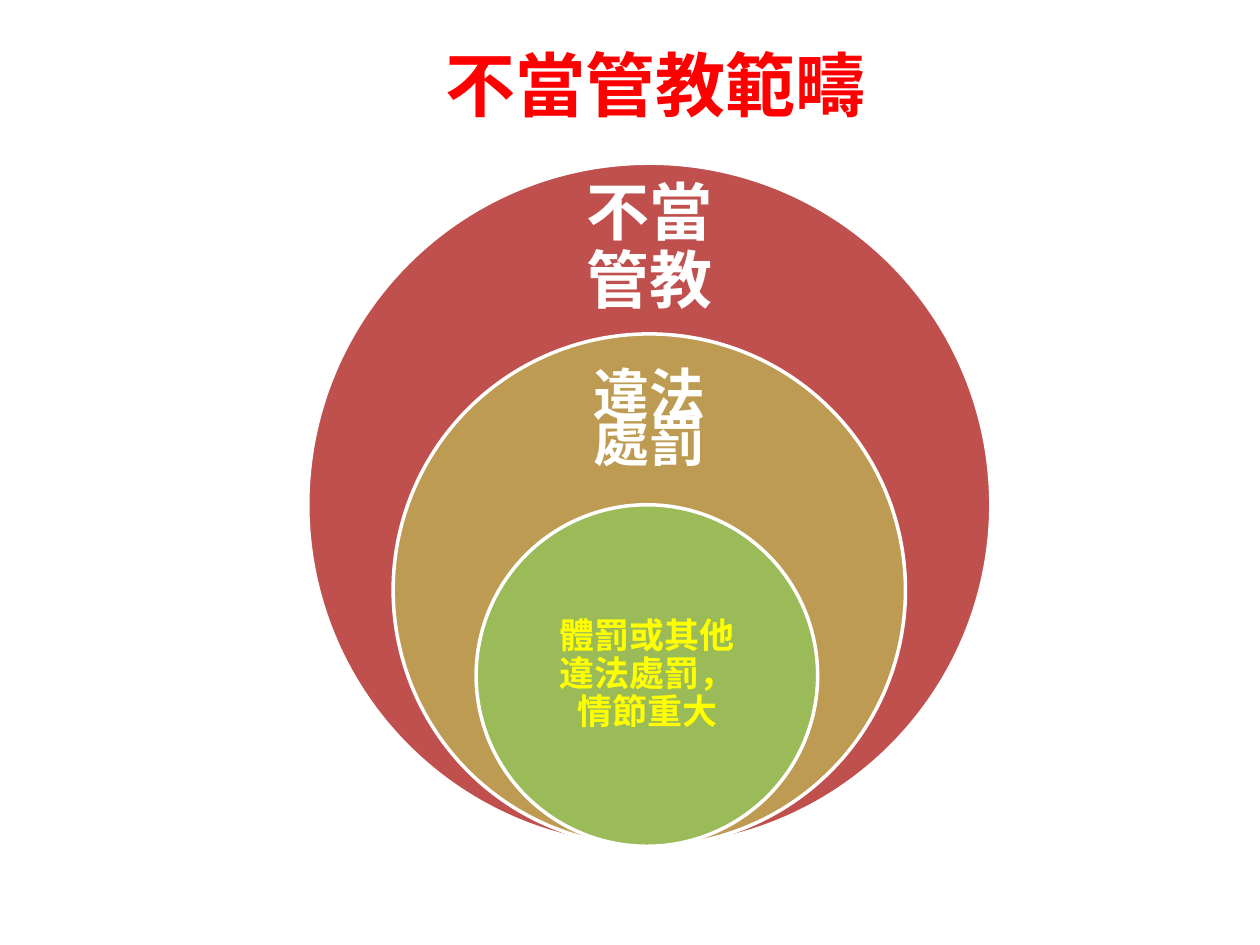
from pptx import Presentation
from pptx.dml.color import RGBColor
from pptx.enum.shapes import MSO_SHAPE
from pptx.enum.text import MSO_ANCHOR, PP_ALIGN
from pptx.util import Cm, Pt

COLOURS = {
    "outer": "C0504D",
    "middle": "BD9B53",
    "inner": "9BBB59",
    "white": "FFFFFF",
    "yellow": "FFFF00",
    "red": "FF0000",
}
OUTER_DIAMETER = 13.77
RINGS_BOTTOM = 17.06


def colour(name):
    """Return the named colour."""
    return RGBColor.from_string(COLOURS[name])


def add_ring(page, name, centre, scale):
    """Draw a circle that stands on the common bottom line."""
    size = OUTER_DIAMETER * scale
    ring = page.shapes.add_shape(
        MSO_SHAPE.OVAL, Cm(centre - size / 2), Cm(RINGS_BOTTOM - size), Cm(size), Cm(size)
    )
    ring.shadow.inherit = False
    ring.fill.solid()
    ring.fill.fore_color.rgb = colour(name)
    ring.line.color.rgb = colour("white")
    ring.line.width = Pt(2)


def add_label(page, lines, area, size, ink, inset=0, spacing=0.9, after=0):
    """Add bold text centred in an area of centre, top, width and height."""
    centre, top, width, height = area
    box = page.shapes.add_textbox(Cm(centre - width / 2), Cm(top), Cm(width), Cm(height))
    frame = box.text_frame
    frame.word_wrap = True
    frame.vertical_anchor = MSO_ANCHOR.MIDDLE
    frame.margin_left = frame.margin_right = Cm(inset)
    frame.margin_top = frame.margin_bottom = Cm(inset)
    frame.text = "\n".join(lines)
    for para in frame.paragraphs:
        para.alignment = PP_ALIGN.CENTER
        para.line_spacing = spacing
        para.space_after = Pt(after)
        para.font.name = "Arial"
        para.font.size = Pt(size)
        para.font.bold = True
        para.font.color.rgb = colour(ink)


def main():
    """Build the slide of nested circles and save it."""
    deck = Presentation()
    deck.slide_width, deck.slide_height = Cm(25.4), Cm(19.05)
    page = deck.slides.add_slide(deck.slide_layouts[6])

    add_ring(page, "outer", 13.09, 1)
    add_label(page, ["不當管教"], (13.09, 3.99, 4.8, 2.06), 36, "white", inset=0.71)
    add_ring(page, "middle", 13.09, 0.75)
    add_label(page, ["違法", "處罰"], (13.09, 7.83, 4.8, 1.93), 32, "white",
              spacing=Pt(15), after=11.2)
    add_ring(page, "inner", 13.04, 0.5)
    add_label(page, ["體罰或其他違法處罰，情節重大"], (13.05, 11.89, 4.88, 3.45), 20, "yellow",
              inset=0.41)
    add_label(page, ["不當管教範疇"], (13.21, 0.1, 22.86, 3.18), 40, "red", spacing=1.0)

    deck.save("out.pptx")


if __name__ == "__main__":
    main()
